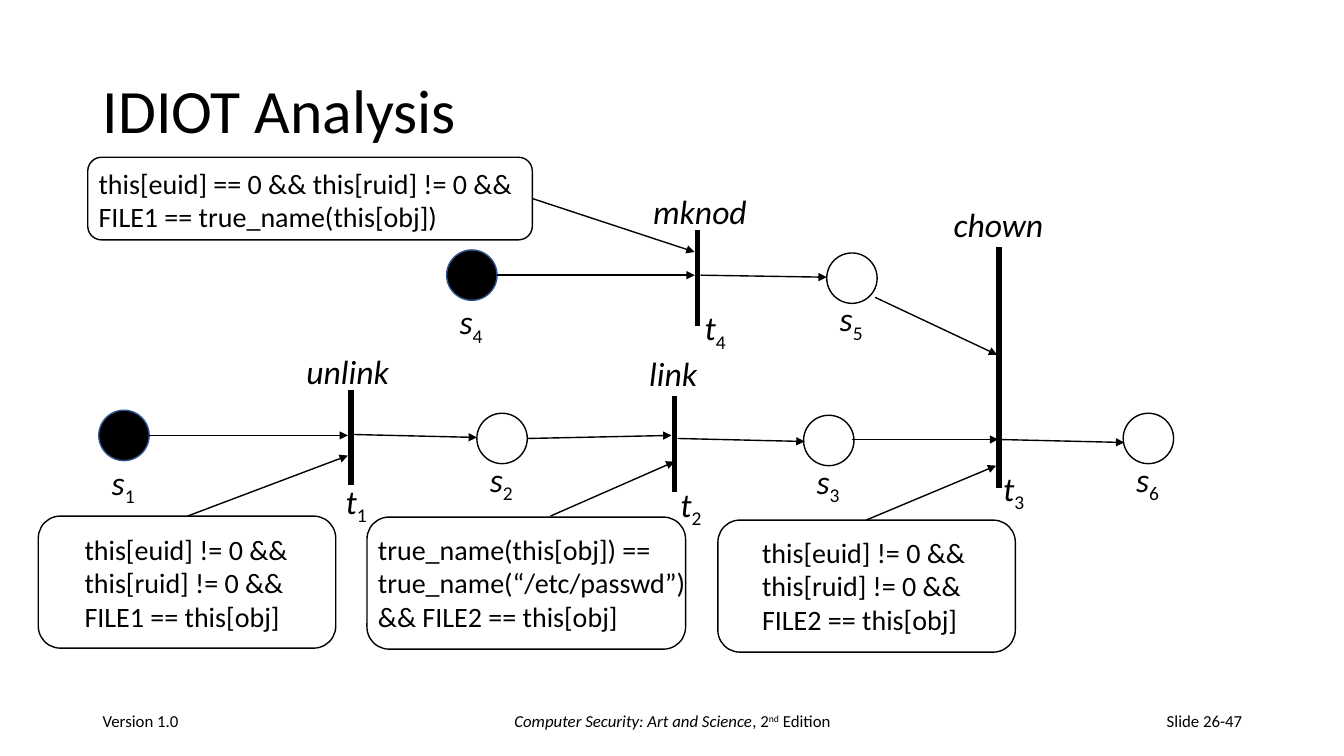
"""Build the IDIOT Analysis slide: a Petri net of places, transitions and guards."""
import pptx
import pptx.dml.color
import pptx.enum.shapes
import pptx.enum.text
import pptx.oxml.ns
import pptx.util
from lxml import etree

SHAPE = pptx.enum.shapes.MSO_SHAPE
ALIGN = pptx.enum.text.PP_ALIGN
ANCHOR = pptx.enum.text.MSO_ANCHOR
THEME = {
    "font": "Calibri",
    "ink": pptx.dml.color.RGBColor(0, 0, 0),
    "token_line": pptx.dml.color.RGBColor(0x32, 0x54, 0x91),
    "title": pptx.util.Pt(44),
    "label": pptx.util.Pt(24),
    "guard": pptx.util.Pt(20),
    "footer": pptx.util.Pt(12),
    "thin": pptx.util.Pt(1),
    "bar": pptx.util.Pt(4),
}

prs = pptx.Presentation()
prs.slide_width = pptx.util.Inches(13.33)
prs.slide_height = pptx.util.Inches(7.5)
ROWS = 75
cell = prs.slide_height / ROWS
s = prs.slides.add_slide(prs.slide_layouts[6])


def add_text(box, lines, size, align=ALIGN.LEFT, anchor=ANCHOR.TOP, wrap=False):
    """Add a text box; each line is a list of (text, italic, baseline) runs."""
    tf = s.shapes.add_textbox(*[round(v * cell) for v in box]).text_frame
    tf.word_wrap = wrap
    tf.vertical_anchor = anchor
    for i, runs in enumerate(lines):
        p = tf.add_paragraph() if i else tf.paragraphs[0]
        p.alignment = align
        p.font.name = THEME["font"]
        p.font.size = THEME[size]
        p.font.color.rgb = THEME["ink"]
        for text, italic, baseline in runs:
            r = p.add_run()
            r.text = text
            r.font.italic = italic
            if baseline:
                r.font._element.set("baseline", str(baseline * 1000))
    return tf


def add_line(ends, weight, arrow=False):
    """Add a straight line from (x1, y1) to (x2, y2)."""
    c = s.shapes.add_connector(
        pptx.enum.shapes.MSO_CONNECTOR.STRAIGHT, *[round(v * cell) for v in ends])
    c.line.color.rgb = THEME["ink"]
    c.line.width = THEME[weight]
    if arrow:
        etree.SubElement(c.line._get_or_add_ln(), pptx.oxml.ns.qn("a:tailEnd"), type="triangle")
    etree.SubElement(c._element.spPr, pptx.oxml.ns.qn("a:effectLst"))


tf = add_text((9.2, 4, 115, 14.5), [[("IDIOT Analysis", False, 0)]], "title",
              anchor=ANCHOR.MIDDLE, wrap=True)
tf.paragraphs[0].line_spacing = 0.9

footers = [
    (9.2, 30, ALIGN.LEFT, [("Version 1.0", False, 0)]),
    (44.2, 45, ALIGN.CENTER, [("Computer Security: Art and Science", True, 0), (", 2", False, 0),
                              ("nd", False, 30), (" Edition", False, 0)]),
    (94.2, 30, ALIGN.RIGHT, [("Slide 26-47", False, 0)]),
]
for x, width, align, runs in footers:
    add_text((x, 69.5, width, 4), [runs], "footer", align, ANCHOR.MIDDLE, True)

places = [
    ("1", 9.8, 40.7, True), ("2", 47.3, 41, False), ("3", 79.7, 41.2, False),
    ("4", 44.3, 24.8, True), ("5", 82, 25.1, False), ("6", 111.4, 41, False),
]
DIAMETER = 5
outlines = [(SHAPE.OVAL, x, y, DIAMETER, DIAMETER, token) for _, x, y, token in places]

guards = [
    ((3.8, 51.2, 29.5, 13.1), (7.4, 52.3, 22.4, 11.1),
     ["this[euid] != 0 &&", "this[ruid] != 0 &&", "FILE1 == this[obj]"]),
    ((36.4, 51.3, 31.6, 13.1), (36.5, 52.3, 32.8, 11.1),
     ["true_name(this[obj]) ==", "true_name(“/etc/passwd”)", "&& FILE2 == this[obj]"]),
    ((71.2, 51.6, 29.5, 13.1), (74.6, 52.6, 23, 11.1),
     ["this[euid] != 0 &&", "this[ruid] != 0 &&", "FILE2 == this[obj]"]),
    ((8.7, 15.6, 44.1, 8.2), (8.8, 16, 43.4, 7.7),
     ["this[euid] == 0 && this[ruid] != 0 &&", "FILE1 == true_name(this[obj])"]),
]
outlines += [(SHAPE.ROUNDED_RECTANGLE, *frame, False) for frame, _, _ in guards]

for kind, x, y, width, height, token in outlines:
    sp = s.shapes.add_shape(kind, *[round(v * cell) for v in (x, y, width, height)])
    sp.shadow.inherit = False
    sp.line.width = THEME["thin"]
    sp.line.color.rgb = THEME["token_line" if token else "ink"]
    if token:
        sp.fill.solid()
        sp.fill.fore_color.rgb = THEME["ink"]
    else:
        sp.fill.background()

for _, box, lines in guards:
    add_text(box, [[(line, False, 0)] for line in lines], "guard")

for number, x, y, token in places:
    add_text((x + 0.3, y + (4.6 if token else 4), 4.5, 5),
             [[("s", True, 0), (number, False, -25)]], "label")

transitions = [
    ("1", "unlink", 34.8, 38.7, 48.1, (29.4, 34.3, 10.3), (33.3, 47.2)),
    ("2", "link", 66.9, 39.3, 48.8, (63.4, 34.5, 6.8), (66.5, 47.5)),
    ("3", "chown", 99.1, 24.5, 48.4, (93.6, 19.7, 11), (98.5, 45.9)),
    ("4", "mknod", 69.2, 22.8, 32.3, (63.8, 18.4, 11.4), (68.9, 30)),
]
for number, call, x, top, bottom, call_box, t_corner in transitions:
    add_line((x, top, x, bottom), "bar")
    add_text((*call_box, 5), [[(call, True, 0)]], "label")
    add_text((*t_corner, 4.3, 5), [[("t", True, 0), (number, False, -25)]], "label")

arrows = [
    (14.8, 43.2, 34.5, 43.2), (34.8, 43.1, 47.3, 43.4), (52.3, 43.5, 66.6, 43.2),
    (67.2, 43.5, 79.8, 43.8), (84.5, 43.6, 99, 43.6), (99, 43.6, 111.5, 43.9),
    (49.3, 27.3, 68.9, 27.3), (69.5, 27.3, 82, 27.5), (86.8, 29.5, 98.9, 35.2),
    (18.6, 51.2, 34.5, 45.2), (54.6, 51.2, 66.9, 45.8), (85.9, 51.6, 98.8, 46.2),
    (52.8, 19.7, 68.9, 25),
]
for ends in arrows:
    add_line(ends, "thin", arrow=True)

prs.save("out.pptx")
